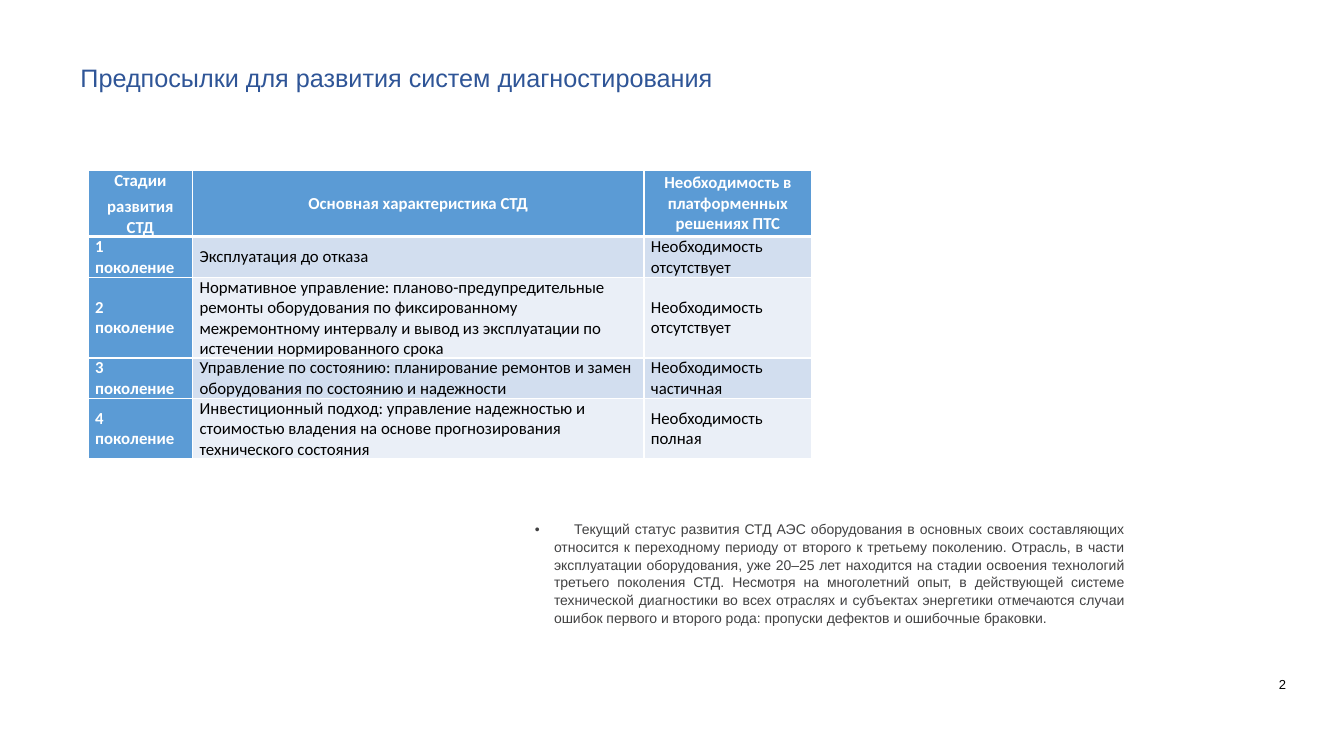
from dataclasses import dataclass
from lxml.etree import SubElement
from pptx import Presentation
from pptx.dml.color import RGBColor
from pptx.enum.text import MSO_ANCHOR, PP_ALIGN
from pptx.oxml.ns import qn
from pptx.slide import Slide
from pptx.util import Pt

COLORS = {
    "title": "2F5597", "body": "414142", "black": "000000", "white": "FFFFFF",
    "header": "5B9BD5", "odd": "D2DEEF", "even": "EAEFF7",
}
COLUMN_WIDTHS = [74.6, 322.4, 120]
ROW_HEIGHTS = [47, 29, 57, 29, 43]
STAGES = [
    ("Стадии\nразвития СТД", "Основная характеристика СТД",
     "Необходимость в платформенных решениях ПТС"),
    ("1 поколение", "Эксплуатация до отказа", "Необходимость отсутствует"),
    ("2 поколение",
     "Нормативное управление: планово-предупредительные ремонты оборудования "
     "по фиксированному межремонтному интервалу и вывод из эксплуатации "
     "по истечении нормированного срока",
     "Необходимость отсутствует"),
    ("3 поколение",
     "Управление по состоянию: планирование ремонтов и замен оборудования "
     "по состоянию и надежности",
     "Необходимость частичная"),
    ("4 поколение",
     "Инвестиционный подход: управление надежностью и стоимостью владения "
     "на основе прогнозирования технического состояния",
     "Необходимость полная"),
]
STATUS = (
    "Текущий статус развития СТД АЭС оборудования в основных своих составляющих "
    "относится к переходному периоду от второго к третьему поколению. Отрасль, в части "
    "эксплуатации оборудования, уже 20–25 лет находится на стадии освоения технологий "
    "третьего поколения СТД. Несмотря на многолетний опыт, в действующей системе "
    "технической диагностики во всех отраслях и субъектах энергетики отмечаются случаи "
    "ошибок первого и второго рода: пропуски дефектов и ошибочные браковки."
)


@dataclass
class Painter:
    page: Slide
    text_font: str = "Arial"
    table_font: str = "Calibri"

    def style(self, para, font, size, color, bold=False, align=PP_ALIGN.LEFT):
        para.alignment = align
        for span in para.runs:
            span.font.name = font
            span.font.size = Pt(size)
            span.font.bold = bold
            span.font.color.rgb = RGBColor.from_string(COLORS[color])

    def text(self, left, top, width, height, text, size, color, align=PP_ALIGN.LEFT):
        box = self.page.shapes.add_textbox(Pt(left), Pt(top), Pt(width), Pt(height))
        box.text_frame.word_wrap = True
        box.text_frame.text = text
        self.style(box.text_frame.paragraphs[0], self.text_font, size, color, align=align)
        return box.text_frame

    def bullet(self, left, top, width, height, text, size, color, indent, first_stop):
        frame = self.text(left, top, width, height, "\t" + text, size, color, PP_ALIGN.JUSTIFY)
        para = frame.paragraphs[0]
        para.line_spacing = 1.05
        properties = para._p.get_or_add_pPr()
        properties.set("marL", str(Pt(indent)))
        properties.set("indent", str(Pt(-indent)))
        SubElement(properties, qn("a:buFont"), typeface=self.text_font)
        SubElement(properties, qn("a:buChar"), char="•")
        stops = SubElement(properties, qn("a:tabLst"))
        SubElement(stops, qn("a:tab"), pos=str(Pt(first_stop)), algn="l")

    def number(self, left, top, width, height, text, size):
        frame = self.text(left, top, width, height, text, size, "black", PP_ALIGN.RIGHT)
        frame.vertical_anchor = MSO_ANCHOR.BOTTOM
        frame.margin_left = frame.margin_right = frame.margin_top = frame.margin_bottom = 0

    def table(self, left, top, widths, heights, rows):
        grid = self.page.shapes.add_table(
            len(rows), len(widths), Pt(left), Pt(top), Pt(sum(widths)), Pt(sum(heights))).table
        for column, width in zip(grid.columns, widths):
            column.width = Pt(width)
        for row, height in zip(grid.rows, heights):
            row.height = Pt(height)
        for row_index, texts in enumerate(rows):
            for column_index, text in enumerate(texts):
                self.cell(grid.cell(row_index, column_index), text, row_index, column_index)

    def cell(self, cell, text, row, column):
        strong = row == 0 or column == 0
        fill = "header" if strong else "odd" if row % 2 else "even"
        cell.margin_left = cell.margin_right = Pt(5)
        cell.margin_top = cell.margin_bottom = 0
        cell.vertical_anchor = MSO_ANCHOR.MIDDLE
        cell.text_frame.text = text
        for index, para in enumerate(cell.text_frame.paragraphs):
            para.space_before = Pt(4 if index else 0)
            self.style(para, self.table_font, 12, "white" if strong else "black", strong,
                       PP_ALIGN.LEFT if row else PP_ALIGN.CENTER)
        properties = cell._tc.get_or_add_tcPr()
        thick_side = {0: "lnB", 1: "lnT"}.get(row)
        for side in ("lnL", "lnR", "lnT", "lnB"):
            line = SubElement(properties, qn("a:" + side), w=str(Pt(3 if side == thick_side else 1)))
            SubElement(SubElement(line, qn("a:solidFill")), qn("a:srgbClr"), val=COLORS["white"])
        cell.fill.solid()
        cell.fill.fore_color.rgb = RGBColor.from_string(COLORS[fill])


def main():
    deck = Presentation()
    deck.slide_width, deck.slide_height = Pt(960), Pt(540)
    painter = Painter(deck.slides.add_slide(deck.slide_layouts[6]))
    painter.number(859.7, 480.2, 59, 14.4, "2", 9.3)
    painter.text(50.4, 41, 650, 55.4, "Предпосылки для развития систем диагностирования", 18, "title")
    painter.bullet(375, 368, 435, 80, STATUS, 10, "body", 13.7, 28)
    painter.table(63, 121.8, COLUMN_WIDTHS, ROW_HEIGHTS, STAGES)
    deck.save("out.pptx")


if __name__ == "__main__":
    main()
